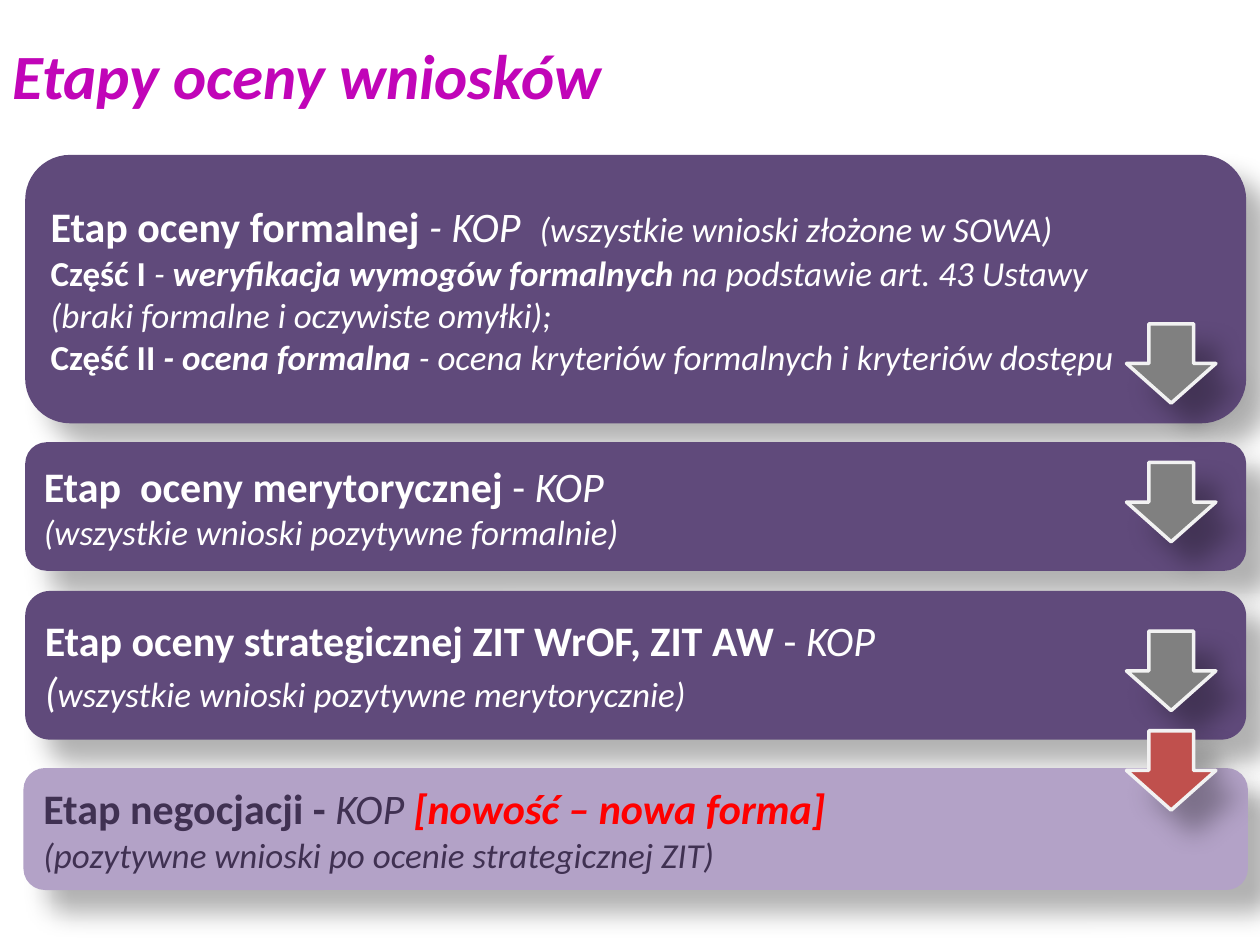
"""Build a slide with the four stages of evaluating applications."""
import lxml.etree
import pptx
import pptx.dml.color
import pptx.enum.shapes
import pptx.enum.text
import pptx.oxml.ns
import pptx.util

COLUMNS, ROWS = 100, 75
WIDTH, HEIGHT = pptx.util.Inches(10), pptx.util.Inches(7.5)
SHAPES = pptx.enum.shapes.MSO_SHAPE
FONT = "Calibri"
PURPLE, LILAC, DARK, WHITE = "604A7B", "B3A2C7", "403152", "FFFFFF"
RED, GREY, BRICK, PALE, MAGENTA = "FF0000", "808080", "C0504D", "F2F2F2", "C105B8"
BOX_LEFT, BOX_WIDTH = 2, 96.9
ARROW_LEFT, ARROW_WIDTH, ARROW_HEIGHT = 89.4, 7.1, 6.3

STAGES = [
    {
        "top": 12.3, "height": 21.3, "fill": PURPLE, "line": None,
        "arrow_offset": 13.4, "arrow_fill": GREY,
        "lines": [
            [("Etap oceny formalnej ", 24, "b", WHITE), ("- KOP  ", 24, "i", WHITE),
             ("(wszystkie wnioski złożone w SOWA)", 20, "i", WHITE)],
            [("Część I ", 20, "b", WHITE), ("- ", 20, "i", WHITE),
             ("weryfikacja wymogów formalnych ", 20, "bi", WHITE),
             ("na podstawie art. 43 Ustawy", 20, "i", WHITE)],
            [("(braki formalne i oczywiste omyłki);", 20, "i", WHITE)],
            [("Część II ", 20, "b", WHITE), ("- ocena formalna ", 20, "bi", WHITE),
             ("- ocena kryteriów formalnych i kryteriów dostępu", 20, "i", WHITE)],
        ],
    },
    {
        "top": 35.1, "height": 10.2, "fill": PURPLE, "line": None,
        "arrow_offset": 1.6, "arrow_fill": GREY,
        "lines": [
            [("Etap  oceny merytorycznej ", 24, "b", WHITE), ("- ", 24, "", WHITE),
             ("KOP", 24, "i", WHITE)],
            [("(wszystkie wnioski pozytywne formalnie)", 20, "i", WHITE)],
        ],
    },
    {
        "top": 46.9, "height": 11.8, "fill": PURPLE, "line": None,
        "arrow_offset": 3.2, "arrow_fill": GREY,
        "lines": [
            [("Etap oceny strategicznej ZIT WrOF, ZIT AW ", 24, "b", WHITE),
             ("- ", 24, "", WHITE), ("KOP", 24, "i", WHITE)],
            [("(", 24, "i", WHITE),
             ("wszystkie wnioski pozytywne merytorycznie)", 20, "i", WHITE)],
        ],
    },
    {
        "top": 61.1, "height": 9.4, "fill": LILAC, "line": LILAC,
        "arrow_offset": -3.1, "arrow_fill": BRICK,
        "lines": [
            [("Etap negocjacji - ", 24, "b", DARK), ("KOP ", 24, "i", DARK),
             ("[nowość – nowa forma]", 24, "bi", RED)],
            [("(pozytywne wnioski po ocenie strategicznej ZIT)", 20, "i", DARK)],
        ],
    },
]


def color(value):
    """Turn a hex string into a colour."""
    return pptx.dml.color.RGBColor.from_string(value)


def grid_box(left, top, width, height):
    """Turn columns and rows of the grid into slide lengths."""
    return (int(left * WIDTH / COLUMNS), int(top * HEIGHT / ROWS),
            int(width * WIDTH / COLUMNS), int(height * HEIGHT / ROWS))


def add_run(paragraph, text, size, style, text_color):
    """Add one formatted run; style holds b for bold and i for italic."""
    run = paragraph.add_run()
    run.text = text
    formats = {"name": FONT, "size": pptx.util.Pt(size),
               "bold": "b" in style, "italic": "i" in style}
    for name, value in formats.items():
        setattr(run.font, name, value)
    run.font.color.rgb = color(text_color)


def add_shadow(shape):
    """Give a shape a soft shadow to its lower right."""
    shape.shadow.inherit = False
    qualified = pptx.oxml.ns.qn
    effects = shape._element.spPr.find(qualified("a:effectLst"))
    outer = lxml.etree.SubElement(
        effects, qualified("a:outerShdw"), blurRad=str(pptx.util.Pt(15)),
        dist=str(pptx.util.Pt(18)), dir="2700000", algn="tl", rotWithShape="0")
    shade = lxml.etree.SubElement(outer, qualified("a:srgbClr"), val="000000")
    lxml.etree.SubElement(shade, qualified("a:alpha"), val="30000")


def add_block(slide, kind, box, fill, line):
    """Add a filled shape with a shadow and an optional outline."""
    shape = slide.shapes.add_shape(kind, *grid_box(*box))
    shape.fill.solid()
    shape.fill.fore_color.rgb = color(fill)
    if line:
        shape.line.color.rgb = color(line)
        shape.line.width = pptx.util.Pt(2)
    else:
        shape.line.fill.background()
    add_shadow(shape)
    return shape


def add_title(slide, box, text):
    """Move the title placeholder to its box and fill it."""
    title = slide.shapes.title
    for name, value in zip(("left", "top", "width", "height"), grid_box(*box)):
        setattr(title, name, value)
    title.text_frame.vertical_anchor = pptx.enum.text.MSO_ANCHOR.MIDDLE
    paragraph = title.text_frame.paragraphs[0]
    paragraph.alignment = pptx.enum.text.PP_ALIGN.LEFT
    paragraph.line_spacing = 0.9
    add_run(paragraph, text, 36, "bi", MAGENTA)


def add_stage(slide, box, stage):
    """Add the rounded panel of one stage with its lines of text."""
    panel = add_block(slide, SHAPES.ROUNDED_RECTANGLE, box, stage["fill"], stage["line"])
    frame = panel.text_frame
    frame.word_wrap = True
    frame.vertical_anchor = pptx.enum.text.MSO_ANCHOR.MIDDLE
    for number, runs in enumerate(stage["lines"]):
        paragraph = frame.add_paragraph() if number else frame.paragraphs[0]
        paragraph.alignment = pptx.enum.text.PP_ALIGN.LEFT
        for run in runs:
            add_run(paragraph, *run)


def main():
    """Build and save the slide."""
    presentation = pptx.Presentation()
    presentation.slide_width, presentation.slide_height = WIDTH, HEIGHT
    slide = presentation.slides.add_slide(presentation.slide_layouts[5])
    add_title(slide, (0, 0, 90.2, 12.5), "Etapy oceny wniosków")
    for stage in STAGES:
        add_stage(slide, (BOX_LEFT, stage["top"], BOX_WIDTH, stage["height"]), stage)
    for stage in STAGES:
        arrow_top = stage["top"] + stage["arrow_offset"]
        add_block(slide, SHAPES.DOWN_ARROW,
                  (ARROW_LEFT, arrow_top, ARROW_WIDTH, ARROW_HEIGHT),
                  stage["arrow_fill"], PALE)
    presentation.save("out.pptx")


if __name__ == "__main__":
    main()
